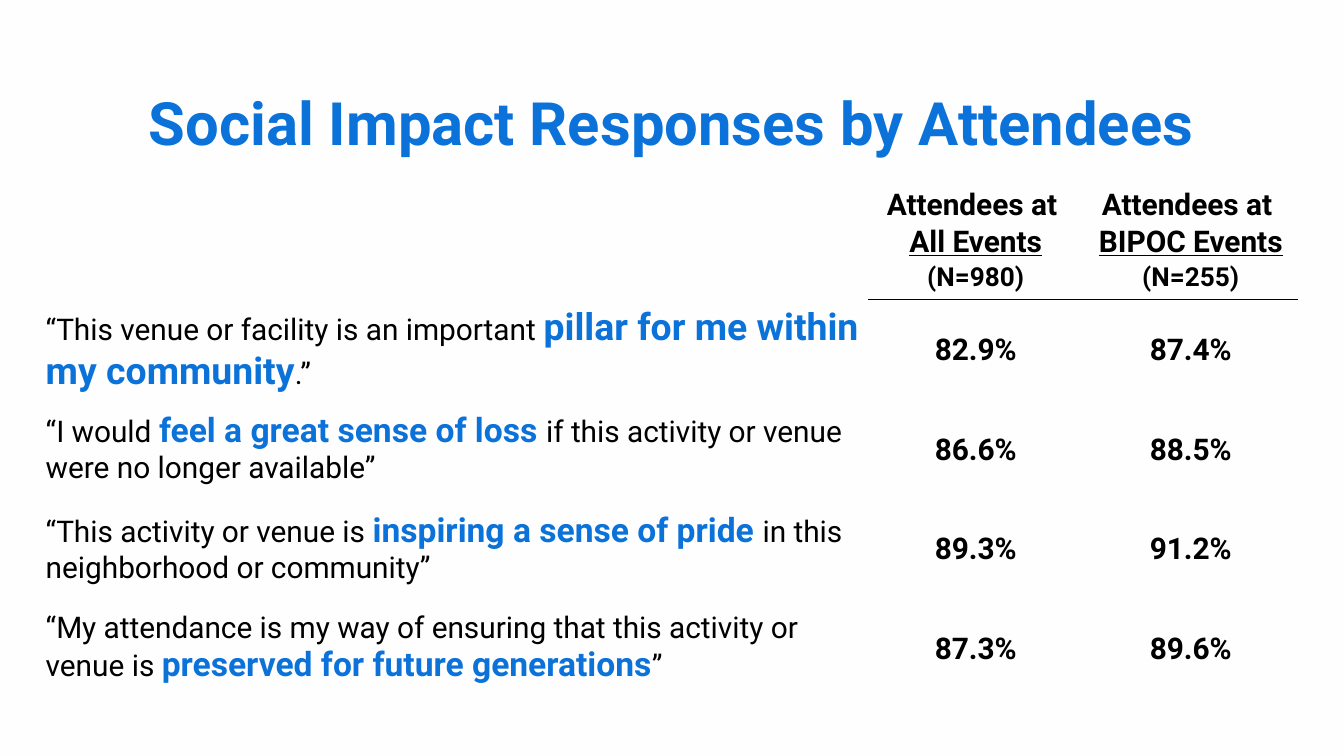
from dataclasses import dataclass

import pptx
import pptx.dml.color
import pptx.enum.text
import pptx.oxml
import pptx.oxml.ns
import pptx.util

ALIGN = pptx.enum.text.PP_ALIGN
MIDDLE = pptx.enum.text.MSO_ANCHOR.MIDDLE


@dataclass(frozen=True)
class Theme:
    font: str = "Roboto"
    back: str = "FEFEFE"
    ink: str = "000000"
    blue: str = "0B72D9"
    title: int = 32
    body: int = 16
    note: int = 14
    lead: int = 20
    key: int = 18
    no_grid: str = "{2D5ABB26-0587-4C30-8999-92F81FD0307C}"


class Deck:
    """Holds the theme and the current slide; lengths are shares of the slide."""

    def __init__(self, theme, wide, high):
        self.theme = theme
        self.file = pptx.Presentation()
        self.file.slide_width = pptx.util.Inches(wide)
        self.file.slide_height = pptx.util.Inches(high)
        self.slide = self.file.slides.add_slide(self.file.slide_layouts[6])
        fill = self.slide.background.fill
        fill.solid()
        fill.fore_color.rgb = self.color(theme.back)

    def color(self, code):
        return pptx.dml.color.RGBColor.from_string(code)

    def x(self, share):
        return round(self.file.slide_width * share)

    def y(self, share):
        return round(self.file.slide_height * share)

    def style(self, font, size, color, bold):
        font.name = self.theme.font
        font.size = pptx.util.Pt(size)
        font.color.rgb = self.color(color)
        font.bold = bold

    def title(self, text, top, high):
        box = self.slide.shapes.add_textbox(0, self.y(top), self.x(1), self.y(high))
        frame = box.text_frame
        frame.word_wrap = True
        frame.vertical_anchor = MIDDLE
        para = frame.paragraphs[0]
        para.text = text
        para.alignment = ALIGN.CENTER
        self.style(para.font, self.theme.title, self.theme.blue, True)

    def table(self, left, top, cols, rows):
        shape = self.slide.shapes.add_table(
            len(rows), len(cols), self.x(left), self.y(top),
            self.x(sum(cols)), self.y(sum(rows)))
        grid = shape.table
        grid.first_row = grid.horz_banding = False
        props = grid._tbl.tblPr
        props.find(pptx.oxml.ns.qn("a:tableStyleId")).text = self.theme.no_grid
        for col, share in zip(grid.columns, cols):
            col.width = self.x(share)
        for row, share in zip(grid.rows, rows):
            row.height = self.y(share)
        for cell in grid.iter_cells():
            cell.fill.background()
            cell.vertical_anchor = MIDDLE
            cell.margin_left = cell.margin_right = 0
            cell.margin_top = cell.margin_bottom = 0
        return grid

    def figure(self, cell, text):
        para = cell.text_frame.paragraphs[0]
        para.text = text
        para.alignment = ALIGN.CENTER
        para.line_spacing = 1.07
        self.style(para.font, self.theme.body, self.theme.ink, True)

    def head(self, cell, group, count):
        self.figure(cell, "Attendees at ")
        para = cell.text_frame.paragraphs[0]
        para.add_line_break()
        run = para.add_run()
        run.text = group
        run.font.underline = True
        para.add_line_break()
        run = para.add_run()
        run.text = f"(N={count})"
        run.font.size = pptx.util.Pt(self.theme.note)

    def quote(self, cell, start, key, end, size):
        para = cell.text_frame.paragraphs[0]
        para.space_after = pptx.util.Pt(12)
        self.style(para.font, self.theme.body, self.theme.ink, False)
        for text in (start, key, end):
            run = para.add_run()
            run.text = text
            if text == key:
                self.style(run.font, size, self.theme.blue, True)

    def rule(self, cell, side, drawn=True):
        fill = (f'<a:solidFill><a:srgbClr val="{self.theme.ink}"/></a:solidFill>'
                if drawn else '<a:noFill/>')
        line = pptx.oxml.parse_xml(
            f'<a:ln{side} {pptx.oxml.ns.nsdecls("a")} w="{pptx.util.Pt(1)}">'
            f'{fill}</a:ln{side}>')
        cell._tc.get_or_add_tcPr().insert(0, line)


GROUPS = [("All Events", 980), ("BIPOC Events", 255)]
ANSWERS = [
    ("“This venue or facility is an important ",
     "pillar for me within my community", ".”", "82.9%", "87.4%"),
    ("“I would ", "feel a great sense of loss ",
     "if this activity or venue were no longer available”", "86.6%", "88.5%"),
    ("“This activity or venue is ", "inspiring a sense of pride ",
     "in this neighborhood or community”", "89.3%", "91.2%"),
    ("“My attendance is my way of ensuring that this activity or venue is ",
     "preserved for future generations", "”", "87.3%", "89.6%"),
]


def main():
    theme = Theme()
    wide = 10
    high = wide * 9 / 16
    deck = Deck(theme, wide, high)

    # Title
    deck.title("Social Impact Responses by Attendees", 0.57 / high, 0.67 / high)

    # Table frame: one wide quote column, two figure columns
    cols = [6.12 / wide] + [1.6 / wide] * len(GROUPS)
    rows = [0.9 / high] + [0.74 / high] * len(ANSWERS)
    grid = deck.table(0.34 / wide, 1.33 / high, cols, rows)

    # Column heads with the line below them, and none under the first answer
    for col, (group, count) in enumerate(GROUPS, 1):
        deck.head(grid.cell(0, col), group, count)
        deck.rule(grid.cell(0, col), "B")
        deck.rule(grid.cell(1, col), "B", drawn=False)
        deck.rule(grid.cell(1, col), "T")

    # Quotes and their shares
    for row, (start, key, end, *shares) in enumerate(ANSWERS, 1):
        size = theme.lead if row == 1 else theme.key
        deck.quote(grid.cell(row, 0), start, key, end, size)
        for col, share in enumerate(shares, 1):
            deck.figure(grid.cell(row, col), share)

    deck.file.save("out.pptx")


if __name__ == "__main__":
    main()
